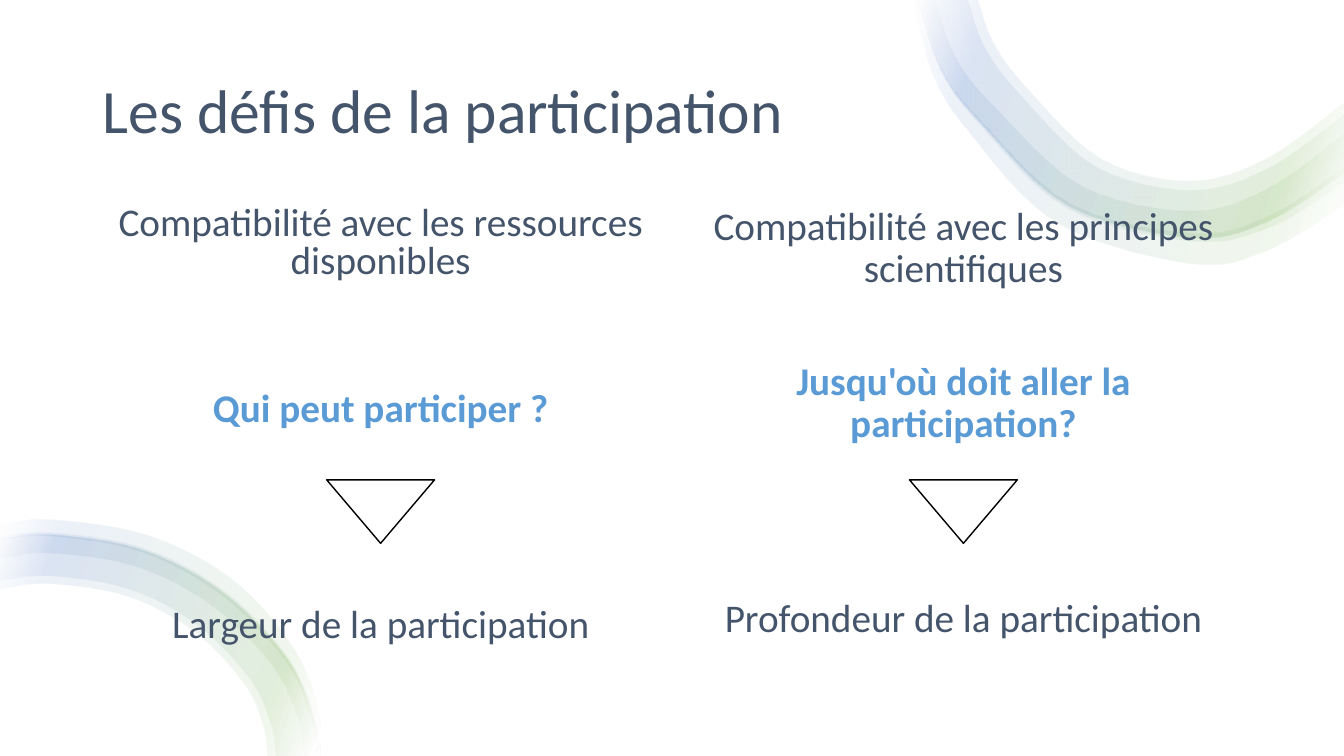
from math import cos, radians, sin
from pptx import Presentation
from pptx.dml.color import RGBColor
from pptx.enum.shapes import MSO_SHAPE as Shape
from pptx.enum.text import MSO_ANCHOR as Anchor, PP_ALIGN as Align
from pptx.oxml import parse_xml
from pptx.oxml.ns import nsdecls, qn
from pptx.util import Inches, Pt

# Content: each row is text, colour, bold, space before in points
FONT, INK, SKY = "Calibri", "44546A", "5B9BD5"
TITLE = "Les défis de la participation"
COLS = [
    (0.8, [("Compatibilité avec les ressources disponibles", INK, False, 10),
           ("Qui peut participer ?", SKY, True, 79),
           ("Largeur de la participation", INK, False, 127)]),
    (0.9, [("Compatibilité avec les principes scientifiques", INK, False, 10),
           ("Jusqu'où doit aller la participation?", SKY, True, 50),
           ("Profondeur de la participation", INK, False, 109)]),
]

# Ribbons: a base line of x, y and inward angle, the side it faces, its
# middle point, and bands as insets of both edges at start, middle and end
STOPS = [(2, "FFFFFF"), (16, "70AD47"), (85, "4472C4"), (100, "FFFFFF")]
FLUSH = (0, 0, 0)
RIBBONS = [
    # Top right
    ([(9.11, 0, 0), (9.33, 0.68, 25), (9.73, 1.22, 35), (10.6, 2.04, 55),
      (11.81, 2.35, 90), (12.57, 2.19, 90), (13.33, 1.71, 90)], 1, 4,
     [((-0.04, -0.26, -0.31), (-0.01, 0.04, 0.06)),
      ((0, -0.04, -0.1), (0.16, 0.26, 0.39)),
      (FLUSH, (0.49, 0.47, 0.58)),
      (FLUSH, (0.59, 0.56, 0.7))]),
    # Bottom left
    ([(0, 5.36, 90), (0.49, 5.31, 90), (1.41, 5.46, 72), (2.22, 5.89, 52),
      (2.84, 6.53, 33), (3.1, 7.1, 15), (3.16, 7.5, 0)], -1, 3,
     [(FLUSH, (0.49, 0.48, 0.51)),
      (FLUSH, (0.41, 0.41, 0.43)),
      ((-0.02, -0.02, 0), (0.19, 0.17, 0.14)),
      ((-0.15, -0.16, -0.01), (0, 0.03, 0.02))]),
]

# Grid in inches
WIDE, HIGH = 13.33, 7.5
LEFT, STEP, COL_W = 0.92, 5.78, 5.71
BODY_Y, BODY_H = 2, 4.76
TRI_Y, TRI_W, TRI_H = 4.76, 1.07, 0.63

deck = Presentation()
deck.slide_width, deck.slide_height = Inches(WIDE), Inches(HIGH)
slide = deck.slides.add_slide(deck.slide_layouts[6])
shapes = slide.shapes


def paint(color):
    return RGBColor.from_string(color)


def curve(pts, cuts=6):
    """Points of a smooth spline through pts."""
    ext = [pts[0], *pts, pts[-1]]
    out = []
    for quad in zip(ext, ext[1:], ext[2:], ext[3:]):
        for n in range(cuts):
            t = n / cuts
            out.append(tuple(
                (2 * q + (r - p) * t + (2 * p - 5 * q + 4 * r - s) * t ** 2
                 + (3 * q - p - 3 * r + s) * t ** 3) / 2
                for p, q, r, s in zip(*quad)))
    return out + [pts[-1]]


def edge(base, side, mid, inset):
    """The base line moved inward by an inset that changes along it."""
    start, half, end = inset
    last = len(base) - 1
    pts = []
    for n, (x, y, angle) in enumerate(base):
        if n < mid:
            gap = start + (half - start) * n / mid
        else:
            gap = half + (end - half) * (n - mid) / (last - mid)
        turn = radians(angle)
        pts.append((x + side * gap * cos(turn), y - side * gap * sin(turn)))
    return curve(pts)


def ribbon(outer, inner):
    pts = [(Inches(x), Inches(y)) for x, y in outer + inner[::-1]]
    pen = shapes.build_freeform(*pts[0])
    pen.add_line_segments(pts[1:], close=True)
    band = pen.convert_to_shape()
    band.shadow.inherit = False
    band.line.fill.background()
    band.fill.background()
    stops = "".join(
        f'<a:gs pos="{pos * 1000}"><a:srgbClr val="{color}">'
        '<a:alpha val="10000"/></a:srgbClr></a:gs>' for pos, color in STOPS)
    grad = parse_xml(f'<a:gradFill {nsdecls("a")}><a:gsLst>{stops}</a:gsLst>'
                     f'<a:lin ang="{200 * 60000}" scaled="0"/></a:gradFill>')
    props = band.element.spPr
    props.replace(props.find(qn("a:noFill")), grad)


def write(box, rows, size=28, lead=0.9, align=Align.CENTER,
          anchor=Anchor.TOP):
    frame = shapes.add_textbox(*map(Inches, box)).text_frame
    frame.word_wrap, frame.vertical_anchor = True, anchor
    for n, (text, color, bold, gap) in enumerate(rows):
        para = frame.add_paragraph() if n else frame.paragraphs[0]
        para.alignment, para.line_spacing = align, lead
        para.space_before = Pt(gap)
        run = para.add_run()
        run.text = text
        font = run.font
        font.name, font.size, font.bold = FONT, Pt(size), bold
        font.color.rgb = paint(color)


# Background and ribbons
slide.background.fill.solid()
slide.background.fill.fore_color.rgb = paint("FFFFFF")
for base, side, mid, bands in RIBBONS:
    for pair in bands:
        ribbon(*(edge(base, side, mid, inset) for inset in pair))

# Title
write((LEFT, 0.4, 11.5, 1.45), [(TITLE, INK, False, 0)], size=44,
      align=Align.LEFT, anchor=Anchor.MIDDLE)

# Columns, each with a triangle pointing down
for n, (lead, rows) in enumerate(COLS):
    x = LEFT + n * STEP
    write((x, BODY_Y, COL_W, BODY_H), rows, lead=lead)
    tri = shapes.add_shape(
        Shape.ISOSCELES_TRIANGLE, Inches(x + (COL_W - TRI_W) / 2),
        Inches(TRI_Y), Inches(TRI_W), Inches(TRI_H))
    tri.rotation = 180
    tri.shadow.inherit = False
    tri.fill.background()
    tri.line.color.rgb = paint("000000")
    tri.line.width = Pt(1)

deck.save("out.pptx")
